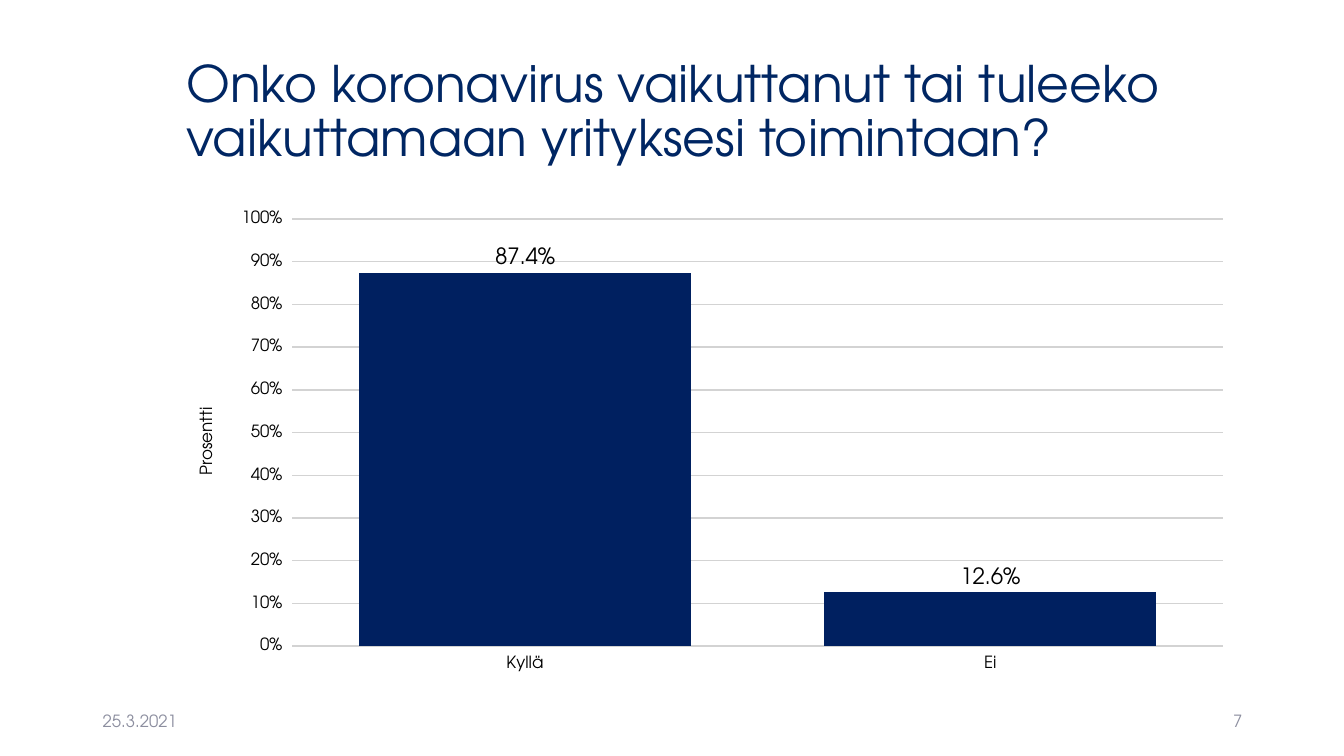
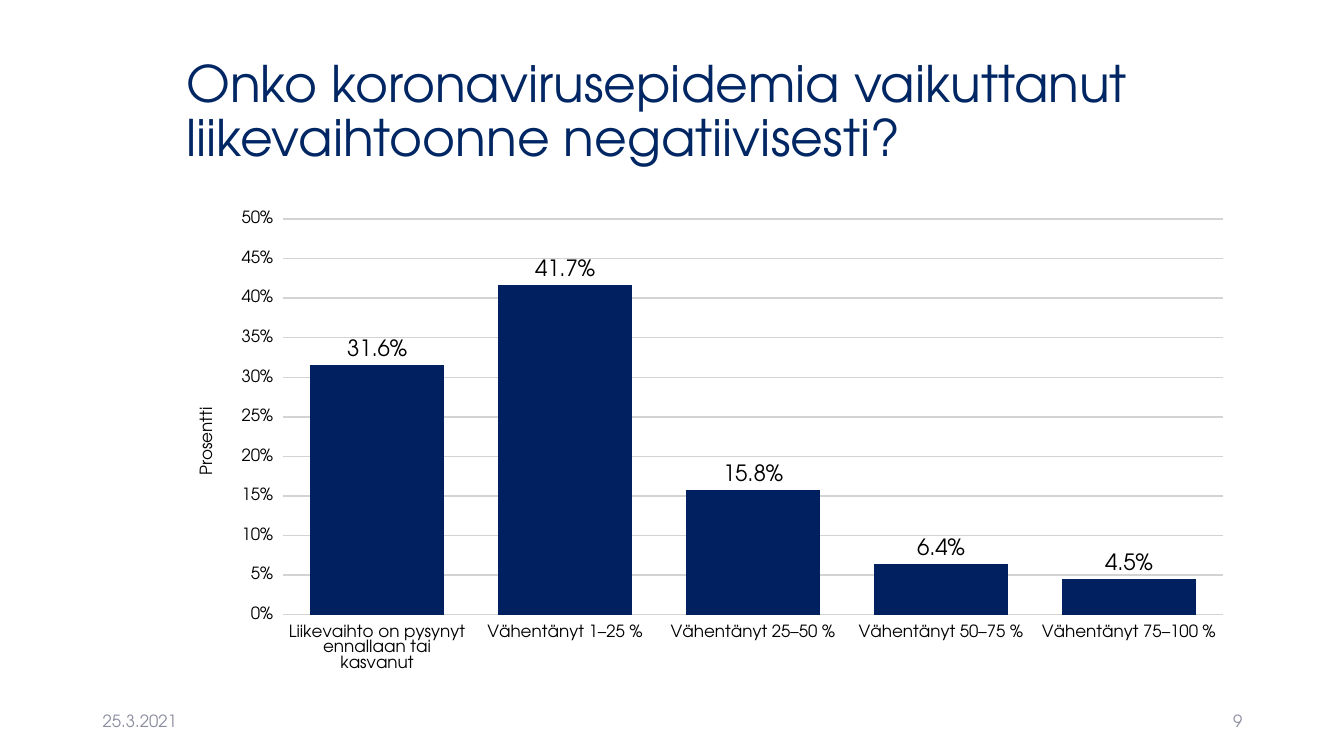
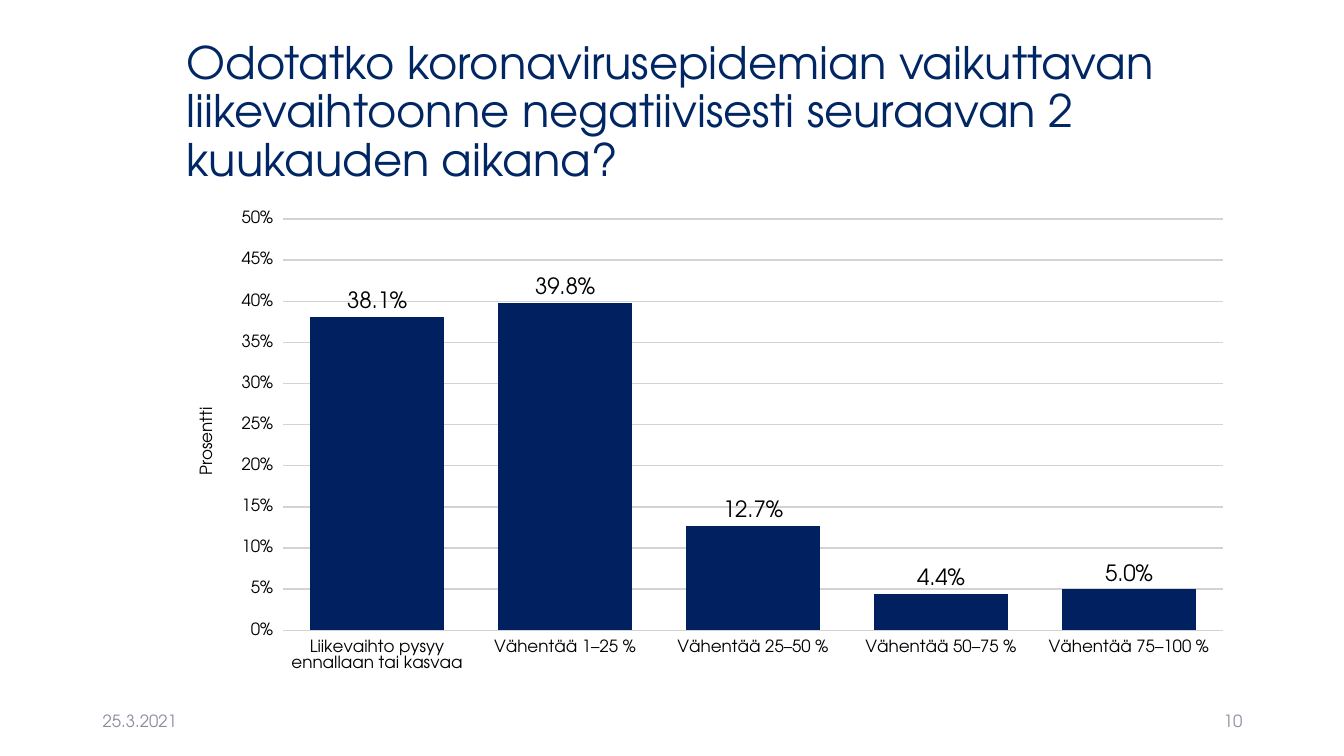
from pptx import Presentation
from pptx.chart.data import CategoryChartData
from pptx.dml.color import RGBColor
from pptx.enum.chart import XL_CHART_TYPE, XL_LABEL_POSITION, XL_TICK_MARK
from pptx.enum.text import MSO_ANCHOR, PP_ALIGN
from pptx.util import Pt

PX = 9144
FONT = "TeX Gyre Adventor"
TITLE_BLUE = RGBColor(0x00, 0x26, 0x63)
BAR_BLUE = RGBColor(0x00, 0x20, 0x60)
FOOTER_GREY = RGBColor(0x8C, 0x8E, 0x9F)
GRID_GREY = RGBColor(0xD3, 0xD3, 0xD3)
BLACK = RGBColor(0x00, 0x00, 0x00)

DATE = "25.3.2021"
AXIS_TITLE = "Prosentti"
CONTENT_LEFT, CONTENT_WIDTH = 175, 1059
FOOTER_TOP, FOOTER_WIDTH, FOOTER_HEIGHT = 695, 300, 40

SURVEY = [
    {
        "number": 7,
        "question": "Onko koronavirus vaikuttanut tai tuleeko vaikuttamaan yrityksesi toimintaan?",
        "title_size": 36,
        "answers": {"Kyllä": 0.874, "Ei": 0.126},
        "maximum": 1,
    },
    {
        "number": 9,
        "question": "Onko koronavirusepidemia vaikuttanut liikevaihtoonne negatiivisesti?",
        "title_size": 36,
        "answers": {
            "Liikevaihto on pysynyt ennallaan tai kasvanut": 0.316,
            "Vähentänyt 1–25 %": 0.417,
            "Vähentänyt 25–50 %": 0.158,
            "Vähentänyt 50–75 %": 0.064,
            "Vähentänyt 75–100 %": 0.045,
        },
        "maximum": 0.5,
    },
    {
        "number": 10,
        "question": "Odotatko koronavirusepidemian vaikuttavan liikevaihtoonne "
                    "negatiivisesti seuraavan 2 kuukauden aikana?",
        "title_size": 32,
        "answers": {
            "Liikevaihto pysyy ennallaan tai kasvaa": 0.381,
            "Vähentää 1–25 %": 0.398,
            "Vähentää 25–50 %": 0.127,
            "Vähentää 50–75 %": 0.044,
            "Vähentää 75–100 %": 0.05,
        },
        "maximum": 0.5,
    },
]


class SurveyDeck:
    """Hold the shared style and draw elements on the current slide."""

    def __init__(self):
        self.presentation = Presentation()
        self.presentation.slide_width = 1333 * PX
        self.presentation.slide_height = 750 * PX
        self.slide = None

    def add_slide(self):
        self.slide = self.presentation.slides.add_slide(self.presentation.slide_layouts[6])

    def style_font(self, font, size, color=BLACK):
        font.name = FONT
        font.size = Pt(size)
        font.bold = False
        font.color.rgb = color

    def add_text(self, text, box, size, color, alignment=PP_ALIGN.LEFT, line_spacing=1.0):
        shape = self.slide.shapes.add_textbox(*(length * PX for length in box))
        frame = shape.text_frame
        frame.word_wrap = True
        frame.vertical_anchor = MSO_ANCHOR.MIDDLE
        paragraph = frame.paragraphs[0]
        paragraph.alignment = alignment
        paragraph.line_spacing = line_spacing
        run = paragraph.add_run()
        run.text = text
        self.style_font(run.font, size, color)

    def add_title(self, text, size):
        self.add_text(text, (CONTENT_LEFT, 40, CONTENT_WIDTH, 145), size, TITLE_BLUE, line_spacing=0.9)

    def add_footer(self, number):
        for text, left, alignment in (
            (DATE, 92, PP_ALIGN.LEFT),
            (str(number), 942, PP_ALIGN.RIGHT),
        ):
            box = (left, FOOTER_TOP, FOOTER_WIDTH, FOOTER_HEIGHT)
            self.add_text(text, box, 12, FOOTER_GREY, alignment)

    def style_axis(self, axis):
        axis.major_tick_mark = XL_TICK_MARK.OUTSIDE
        axis.minor_tick_mark = XL_TICK_MARK.NONE
        axis.format.line.fill.background()
        self.style_font(axis.tick_labels.font, 12)

    def add_column_chart(self, answers, maximum):
        data = CategoryChartData(number_format="0.0%")
        data.categories = list(answers)
        data.add_series("Series 1", list(answers.values()))
        box = (CONTENT_LEFT, 200, CONTENT_WIDTH, 476)
        chart = self.slide.shapes.add_chart(
            XL_CHART_TYPE.COLUMN_CLUSTERED, *(length * PX for length in box), data
        ).chart
        chart.has_legend = False
        chart.has_title = False
        self.style_font(chart.font, 11)

        self.style_axis(chart.category_axis)
        value_axis = chart.value_axis
        self.style_axis(value_axis)
        value_axis.minimum_scale = 0
        value_axis.maximum_scale = maximum
        value_axis.major_unit = maximum / 10
        value_axis.tick_labels.number_format = "0%"
        value_axis.tick_labels.number_format_is_linked = False
        value_axis.major_gridlines.format.line.color.rgb = GRID_GREY
        value_axis.major_gridlines.format.line.width = Pt(1)
        run = value_axis.axis_title.text_frame.paragraphs[0].add_run()
        run.text = AXIS_TITLE
        self.style_font(run.font, 12)

        plot = chart.plots[0]
        plot.gap_width = 40
        plot.vary_by_categories = False
        fill = plot.series[0].format.fill
        fill.solid()
        fill.fore_color.rgb = BAR_BLUE
        plot.has_data_labels = True
        labels = plot.data_labels
        labels.show_value = True
        labels.position = XL_LABEL_POSITION.OUTSIDE_END
        labels.number_format = "0.0%"
        labels.number_format_is_linked = False
        self.style_font(labels.font, 16)


def main():
    deck = SurveyDeck()
    for page in SURVEY:
        deck.add_slide()
        deck.add_title(page["question"], page["title_size"])
        deck.add_footer(page["number"])
        deck.add_column_chart(page["answers"], page["maximum"])
    deck.presentation.save("out.pptx")


if __name__ == "__main__":
    main()
